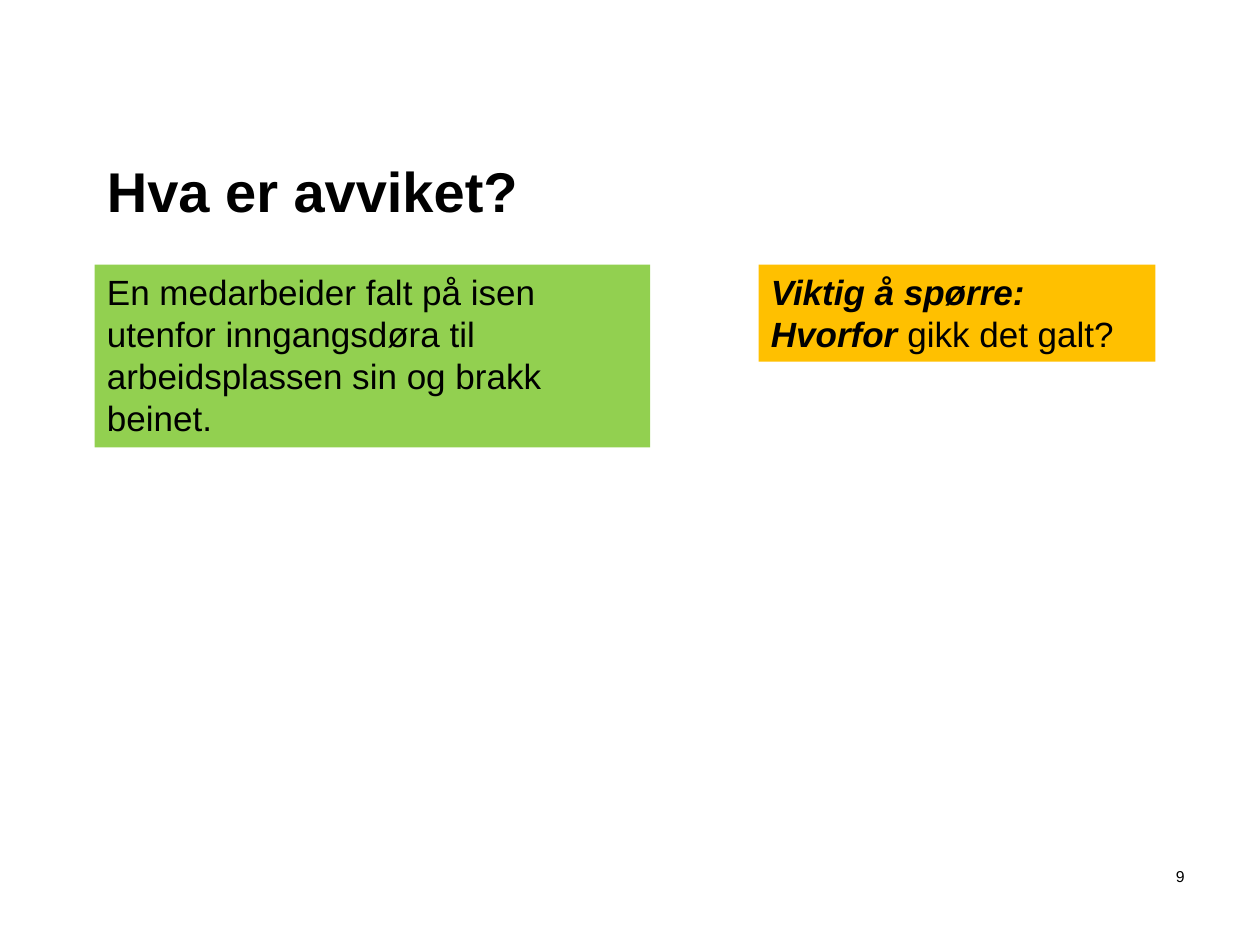
from pptx import Presentation
from pptx.dml.color import RGBColor
from pptx.enum.text import MSO_ANCHOR, PP_ALIGN
from pptx.util import Inches, Pt

THEME = {
    "font": "Arial",
    "text": RGBColor(0x00, 0x00, 0x00),
    "green": RGBColor(0x92, 0xD0, 0x50),
    "amber": RGBColor(0xFF, 0xC0, 0x00),
    "title": Pt(32),
    "body": Pt(20),
    "number": Pt(9),
}

LEFT, RIGHT, BOX_TOP = 0.75, 9.17, 2.1
QUESTION_WIDTH = 3.15

PLAIN, BOLD, STRONG = (False, False), (True, False), (True, True)

BOXES = [
    {
        "place": (LEFT, 0.88, RIGHT - LEFT, 1.25),
        "size": "title",
        "anchor": MSO_ANCHOR.MIDDLE,
        "paragraphs": [[("Hva er avviket?", BOLD)]],
    },
    {
        "place": (8.75, 6.83, 0.75, 0.5),
        "size": "number",
        "align": PP_ALIGN.RIGHT,
        "paragraphs": [[("9", PLAIN)]],
    },
    {
        "place": (LEFT, BOX_TOP, 4.41, 1.45),
        "size": "body",
        "fill": "green",
        "paragraphs": [[(
            "En medarbeider falt på isen utenfor inngangsdøra til "
            "arbeidsplassen sin og brakk beinet.", PLAIN)]],
    },
    {
        "place": (RIGHT - QUESTION_WIDTH, BOX_TOP, QUESTION_WIDTH, 0.77),
        "size": "body",
        "fill": "amber",
        "paragraphs": [
            [("Viktig å spørre:", STRONG)],
            [("Hvorfor ", STRONG), ("gikk det galt?", PLAIN)],
        ],
    },
]


def add_box(slide, box):
    shape = slide.shapes.add_textbox(*map(Inches, box["place"]))
    if "fill" in box:
        shape.fill.solid()
        shape.fill.fore_color.rgb = THEME[box["fill"]]
    frame = shape.text_frame
    frame.word_wrap = True
    frame.vertical_anchor = box.get("anchor", MSO_ANCHOR.TOP)
    for index, runs in enumerate(box["paragraphs"]):
        paragraph = frame.add_paragraph() if index else frame.paragraphs[0]
        paragraph.alignment = box.get("align", PP_ALIGN.LEFT)
        for text, (bold, italic) in runs:
            run = paragraph.add_run()
            run.text = text
            run.font.name = THEME["font"]
            run.font.size = THEME[box["size"]]
            run.font.color.rgb = THEME["text"]
            run.font.bold = bold
            run.font.italic = italic


def main():
    presentation = Presentation()
    presentation.slide_width = Inches(10)
    presentation.slide_height = Inches(7.5)
    slide = presentation.slides.add_slide(presentation.slide_layouts[6])
    for box in BOXES:
        add_box(slide, box)
    presentation.save("out.pptx")


if __name__ == "__main__":
    main()
